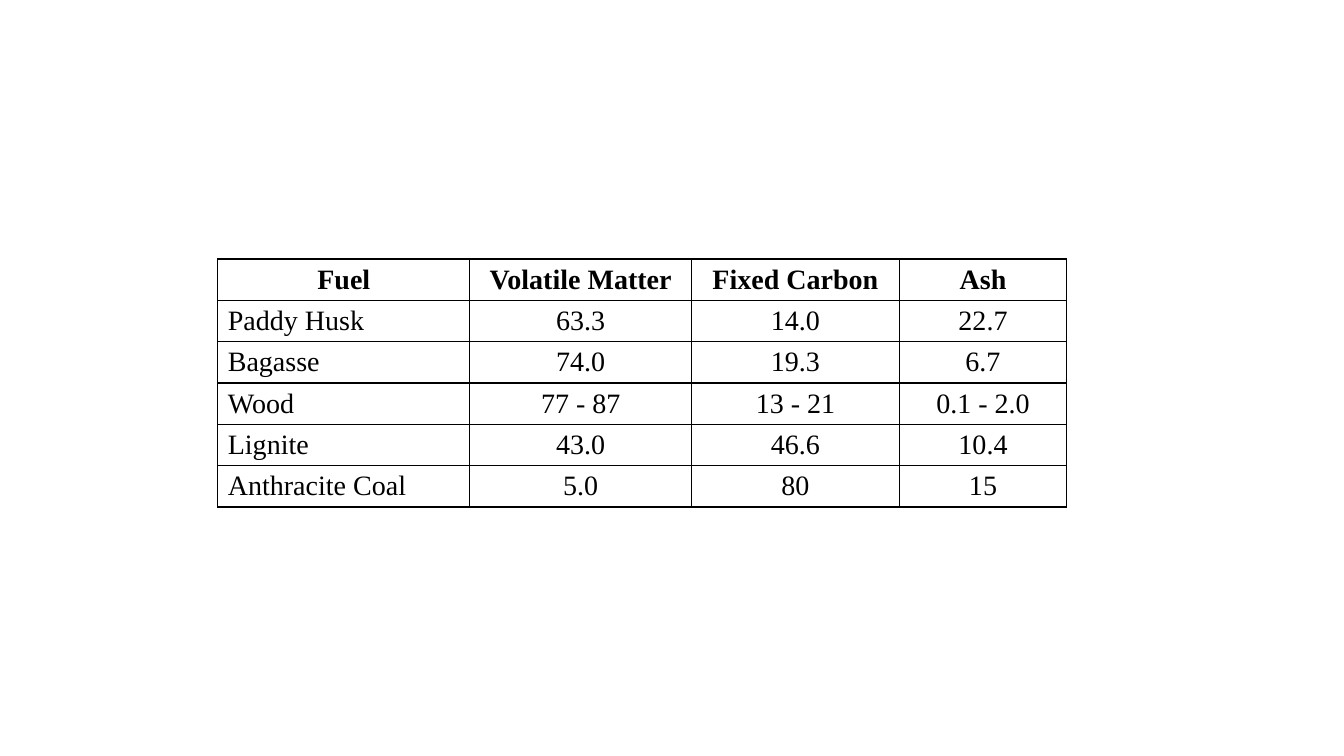
from dataclasses import dataclass

from lxml.etree import SubElement
from pptx import Presentation
from pptx.dml.color import RGBColor
from pptx.enum.text import MSO_ANCHOR, PP_ALIGN
from pptx.oxml.ns import qn
from pptx.util import Inches, Pt


@dataclass(frozen=True)
class Theme:
    font: str = "Times New Roman"
    text_size: int = 20
    ink: str = "000000"
    paper: str = "FFFFFF"
    border: float = 1
    cell_margin: float = 0.04


THEME = Theme()
COLUMN_SHARES = (2.5, 2.2, 2.06, 1.66)
FUELS = (
    ("Fuel", "Volatile Matter", "Fixed Carbon", "Ash"),
    ("Paddy Husk", "63.3", "14.0", "22.7"),
    ("Bagasse", "74.0", "19.3", "6.7"),
    ("Wood", "77 - 87", "13 - 21", "0.1 - 2.0"),
    ("Lignite", "43.0", "46.6", "10.4"),
    ("Anthracite Coal", "5.0", "80", "15"),
)


def draw_borders(cell):
    properties = cell._tc.get_or_add_tcPr()
    for position, side in enumerate(("a:lnL", "a:lnR", "a:lnT", "a:lnB")):
        line = properties.makeelement(qn(side), {"w": str(Pt(THEME.border))})
        fill = SubElement(line, qn("a:solidFill"))
        SubElement(fill, qn("a:srgbClr"), val=THEME.ink)
        # Borders come before the cell's fill
        properties.insert(position, line)


def write_cell(cell, text, alignment, bold):
    cell.fill.solid()
    cell.fill.fore_color.rgb = RGBColor.from_string(THEME.paper)
    cell.vertical_anchor = MSO_ANCHOR.MIDDLE
    cell.margin_top = cell.margin_bottom = Inches(THEME.cell_margin)
    draw_borders(cell)
    paragraph = cell.text_frame.paragraphs[0]
    paragraph.alignment = alignment
    run = paragraph.add_run()
    run.text = text
    run.font.name = THEME.font
    run.font.size = Pt(THEME.text_size)
    run.font.bold = bold
    run.font.color.rgb = RGBColor.from_string(THEME.ink)


def add_fuel_table(slide, left, top, width, height):
    table = slide.shapes.add_table(
        len(FUELS), len(COLUMN_SHARES), left, top, width, height
    ).table
    for column, share in zip(table.columns, COLUMN_SHARES):
        column.width = int(width * share / sum(COLUMN_SHARES))
    for row_index, values in enumerate(FUELS):
        for column_index, text in enumerate(values):
            is_header = row_index == 0
            is_fuel_name = column_index == 0 and not is_header
            alignment = PP_ALIGN.JUSTIFY if is_fuel_name else PP_ALIGN.CENTER
            write_cell(table.cell(row_index, column_index), text, alignment, is_header)


def main():
    presentation = Presentation()
    presentation.slide_width = Inches(13.33)
    presentation.slide_height = Inches(7.5)
    slide = presentation.slides.add_slide(presentation.slide_layouts[6])
    # Fuel composition table
    add_fuel_table(slide, Inches(2.16), Inches(2.57), Inches(8.42), Inches(2.46))
    presentation.save("out.pptx")


if __name__ == "__main__":
    main()
